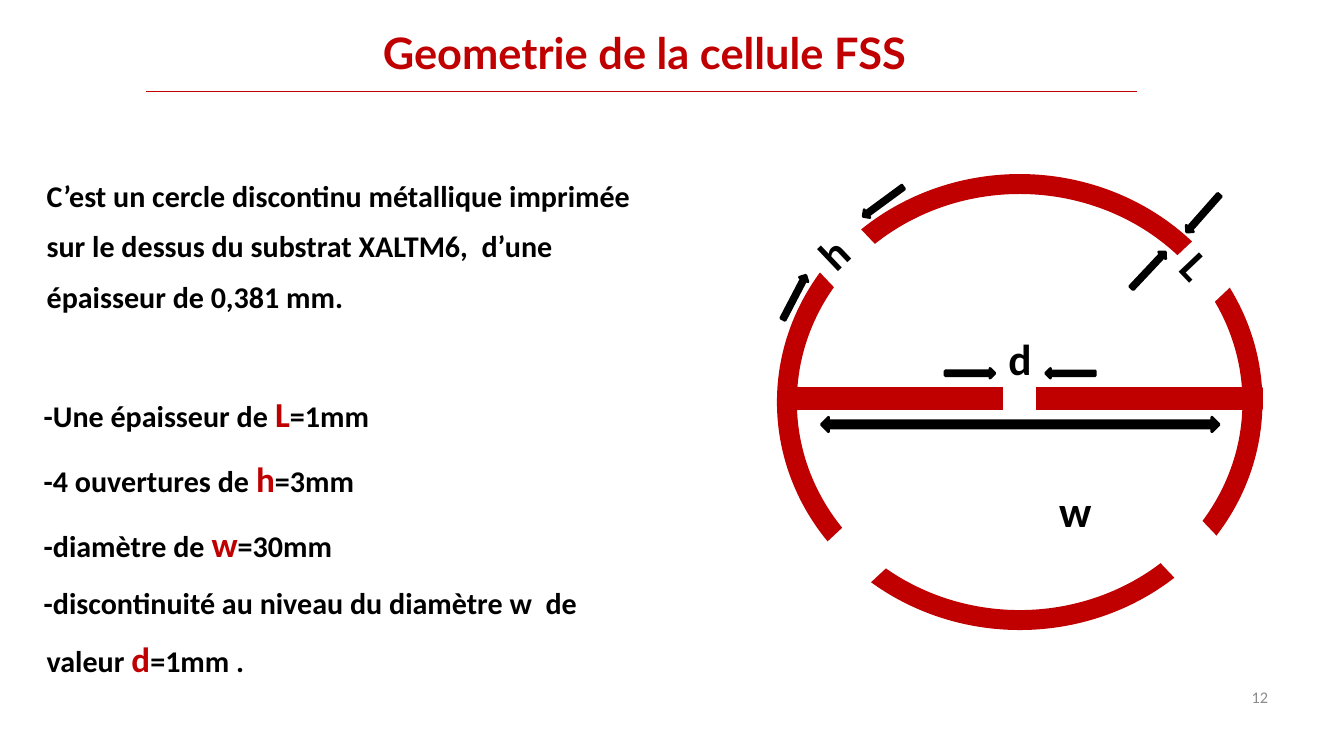
from lxml import etree
from pptx import Presentation
from pptx.dml.color import RGBColor
from pptx.enum.shapes import MSO_CONNECTOR, MSO_SHAPE
from pptx.enum.text import MSO_ANCHOR, PP_ALIGN
from pptx.oxml.ns import qn
from pptx.util import Inches, Pt

RED = RGBColor(0xC0, 0x00, 0x00)
BLACK = RGBColor(0x00, 0x00, 0x00)
WHITE = RGBColor(0xFF, 0xFF, 0xFF)
GRAY = RGBColor(0x8C, 0x8C, 0x8C)
BODY_FONT = "Calibri"
TITLE_FONT = "Lato"
LEFT, CENTER, RIGHT = PP_ALIGN.LEFT, PP_ALIGN.CENTER, PP_ALIGN.RIGHT
TOP, MIDDLE = MSO_ANCHOR.TOP, MSO_ANCHOR.MIDDLE
RECT, DONUT = MSO_SHAPE.RECTANGLE, MSO_SHAPE.DONUT
ARROW, DOUBLE_ARROW = MSO_SHAPE.RIGHT_ARROW, MSO_SHAPE.LEFT_RIGHT_ARROW
STRAIGHT = MSO_CONNECTOR.STRAIGHT

INTRO = ("C’est un cercle discontinu métallique imprimée sur le dessus "
         "du substrat XALTM6,  d’une épaisseur de 0,381 mm.")
DIMENSIONS = [
    ("-Une épaisseur de ", "L", "=1mm"),
    ("-4 ouvertures de ", "h", "=3mm"),
    ("-diamètre de ", "w", "=30mm"),
    ("-discontinuité au niveau du diamètre w  de valeur ", "d", "=1mm ."),
]
OPENINGS = [
    (8.3, 1.97, 316.5, "h"),
    (12.04, 2.22, 46.5, "L"),
    (8.47, 5.14, 227, ""),
    (11.98, 5.15, 316.5, ""),
]
ARROWS = [
    (9.69, 3.78, 0),
    (10.72, 3.78, 180),
    (7.89, 3, 297.5),
    (8.8, 2.02, 143.7),
    (11.52, 2.72, 313.2),
    (12.08, 2.14, 131.4),
]


def format_run(r, size, color=BLACK, bold=True, font=BODY_FONT):
    r.font.size = Pt(size)
    r.font.color.rgb = color
    r.font.bold = bold
    r.font.name = font


def add_text(s, box, text, size, color=BLACK, bold=True, font=BODY_FONT,
             align=LEFT, anchor=TOP, wrap=True):
    tf = s.shapes.add_textbox(*map(Inches, box)).text_frame
    tf.word_wrap = wrap
    tf.vertical_anchor = anchor
    p = tf.paragraphs[0]
    p.text = text
    p.alignment = align
    format_run(p.runs[0], size, color, bold, font)


def add_solid(s, kind, box, color, rotation=0):
    sp = s.shapes.add_shape(kind, *map(Inches, box))
    sp.shadow.inherit = False
    sp.fill.solid()
    sp.fill.fore_color.rgb = color
    sp.line.color.rgb = color
    sp.line.width = Pt(2)
    sp.rotation = rotation
    return sp


def add_opening(s, left, top, rotation, label):
    sp = add_solid(s, RECT, (left, top, 0.58, 1.15), WHITE, rotation)
    if label:
        tf = sp.text_frame
        tf.vertical_anchor = MIDDLE
        p = tf.paragraphs[0]
        p.text = label
        p.alignment = LEFT
        format_run(p.runs[0], 32)


def add_rule(s, left, right, y):
    line = s.shapes.add_connector(
        STRAIGHT, Inches(left), Inches(y), Inches(right), Inches(y))
    line.line.color.rgb = RED
    line.line.width = Pt(0.75)
    etree.SubElement(line._element.spPr, qn("a:effectLst"))


def set_paragraph(p, indent, before):
    p.line_spacing = 1.4
    p.space_before = Pt(before)
    pPr = p._p.get_or_add_pPr()
    pPr.set("marL", str(Inches(0.38)))
    pPr.set("indent", str(Inches(indent)))


def add_description(s):
    box = s.shapes.add_textbox(
        Inches(0), Inches(1.62), Inches(6.65), Inches(5.49))
    tf = box.text_frame
    tf.word_wrap = True
    p = tf.paragraphs[0]
    p.text = INTRO
    set_paragraph(p, 0, 0)
    format_run(p.runs[0], 22.2)
    for i, (lead, symbol, value) in enumerate(DIMENSIONS):
        p = tf.add_paragraph()
        set_paragraph(p, -0.03, 4.5 if i else 45)
        for text, size, color in ((lead, 22.2, BLACK), (symbol, 25.9, RED),
                                  (value, 22.2, BLACK)):
            r = p.add_run()
            r.text = text
            format_run(r, size, color)


def add_cell(s):
    ring = add_solid(s, DONUT, (7.98, 1.8, 4.95, 4.65), RED)
    ring.adjustments[0] = 0.038
    add_solid(s, RECT, (8.03, 3.98, 4.91, 0.21), RED)
    add_solid(s, RECT, (10.3, 3.91, 0.31, 0.41), WHITE)
    for opening in OPENINGS:
        add_opening(s, *opening)
    for left, top, rotation in ARROWS:
        add_solid(s, ARROW, (left, top, 0.51, 0.1), BLACK, rotation)
    add_solid(s, DOUBLE_ARROW, (8.42, 4.28, 4.08, 0.15), BLACK)
    add_text(s, (10.24, 3.36, 0.44, 0.64), "d", 32, wrap=False)
    add_text(s, (10.76, 4.92, 0.54, 0.64), "w", 32, wrap=False)


def main():
    prs = Presentation()
    prs.slide_width = Inches(13.78)
    prs.slide_height = Inches(7.5)
    s = prs.slides.add_slide(prs.slide_layouts[6])
    add_text(s, (0.41, 0, 12.4, 1.08), "Geometrie de la cellule FSS", 32,
             RED, font=TITLE_FONT, align=CENTER, anchor=MIDDLE)
    add_description(s)
    add_text(s, (9.88, 6.95, 3.22, 0.4), "12", 12, GRAY, bold=False,
             align=RIGHT, anchor=MIDDLE)
    add_cell(s)
    add_rule(s, 1.5, 11.66, 0.94)
    prs.save("out.pptx")


if __name__ == "__main__":
    main()
